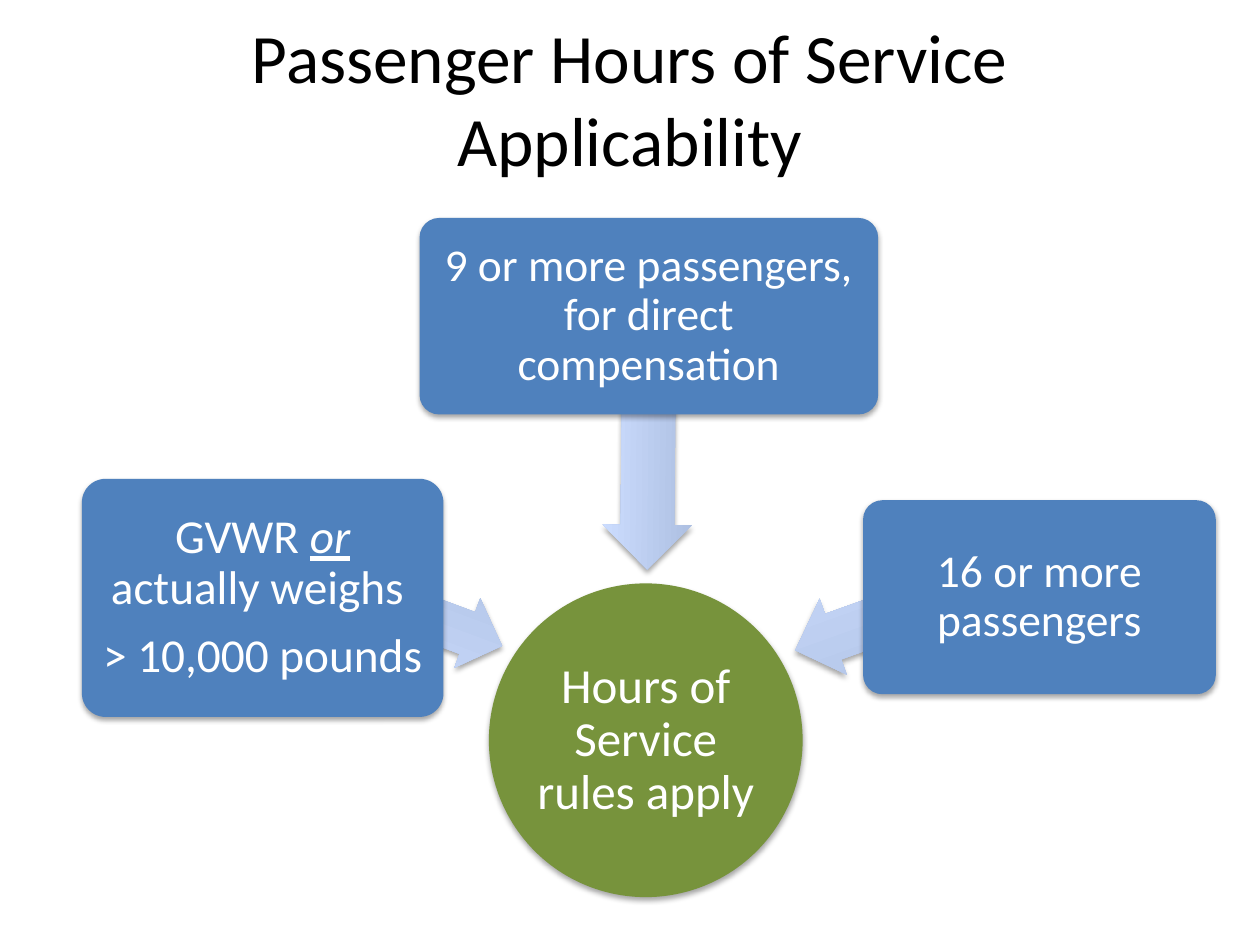
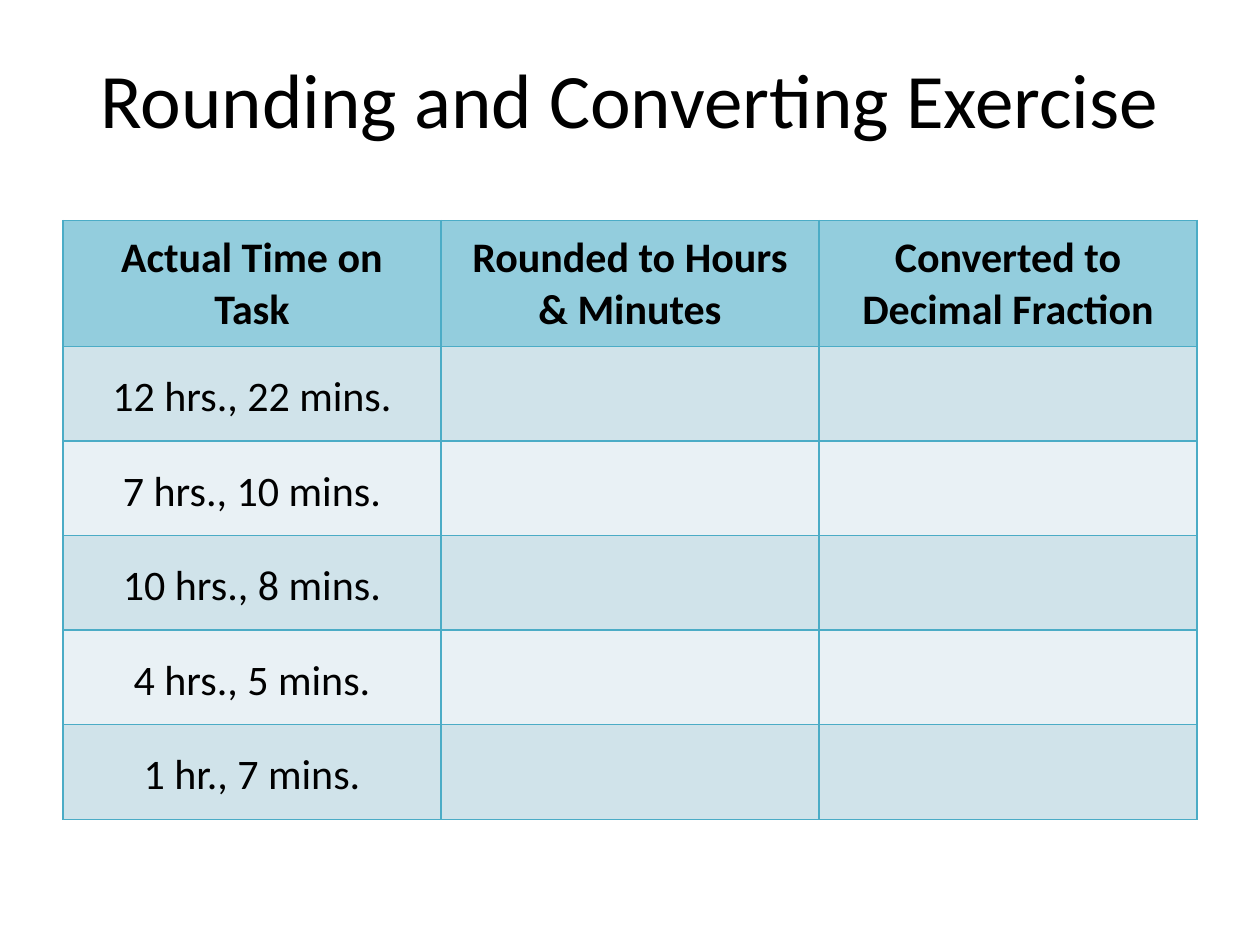
from lxml import etree
from pptx import Presentation
from pptx.dml.color import RGBColor
from pptx.enum.shapes import MSO_SHAPE
from pptx.enum.text import MSO_ANCHOR, PP_ALIGN
from pptx.oxml.ns import qn
from pptx.util import Inches, Pt

CENTER = PP_ALIGN.CENTER
MIDDLE = MSO_ANCHOR.MIDDLE
OVAL = MSO_SHAPE.OVAL
ROUND = MSO_SHAPE.ROUNDED_RECTANGLE
ARROW = MSO_SHAPE.LEFT_ARROW

FONT = "Calibri"
COLORS = {
    "black": "000000", "white": "FFFFFF", "green": "77933C", "blue": "4F81BD",
    "dusk": "ADBFE1", "sky": "CCDDFF", "head": "93CDDD", "odd": "D0E3EA",
    "even": "E9F1F5", "rule": "4BACC6",
}
RGB = {name: RGBColor.from_string(code) for name, code in COLORS.items()}


def write(frame, lines, size, color, bold=False):
    frame.word_wrap = True
    frame.vertical_anchor = MIDDLE
    for i, line in enumerate(lines):
        para = frame.paragraphs[0] if i == 0 else frame.add_paragraph()
        para.alignment = CENTER
        para.font.name = FONT
        para.font.size = Pt(size)
        para.font.bold = bold
        para.font.color.rgb = RGB[color]
        for part in line.split("|"):
            run = para.add_run()
            run.text = part
            if part == "or":
                run.font.italic = True
                run.font.underline = True


def add_shape(slide, kind, box, fill):
    shape = slide.shapes.add_shape(kind, *map(Inches, box))
    if fill:
        shape.fill.solid()
        shape.fill.fore_color.rgb = RGB[fill]
    else:
        shape.fill.gradient()
        shape.fill.gradient_angle = 90
        for stop, name in zip(shape.fill.gradient_stops, ("dusk", "sky")):
            stop.color.rgb = RGB[name]
    shape.line.fill.background()
    shape.shadow.inherit = False
    effects = shape._element.spPr.find(qn("a:effectLst"))
    shadow = etree.SubElement(effects, qn("a:outerShdw"), blurRad=str(Pt(3.1)),
                              dist=str(Pt(1.8)), dir="5400000", rotWithShape="0")
    tint = etree.SubElement(shadow, qn("a:srgbClr"), val=COLORS["black"])
    etree.SubElement(tint, qn("a:alpha"), val="35000")
    return shape


deck = Presentation()
deck.slide_width = Inches(10)
deck.slide_height = Inches(7.5)

slides = []
for title, size in (("Passenger Hours of Service Applicability", 39.6),
                    ("Rounding and Converting Exercise", 44)):
    slide = deck.slides.add_slide(deck.slide_layouts[6])
    box = slide.shapes.add_textbox(Inches(0.5), Inches(0.15), Inches(9), Inches(1.25))
    write(box.text_frame, [title], size, "black")
    slides.append(slide)
rules, drill = slides

nodes = [
    (OVAL, (3.88, 4.63, 2.49, 2.49), "green", 28, 0.02,
     ["Hours of Service rules apply"], None, None),
    (ROUND, (0.65, 3.8, 2.87, 1.89), "blue", 27, 0.06,
     ["GVWR |or| actually weighs ", "> 10,000 pounds"],
     (1.98, 4.47, 2.07, 0.59), 200.4),
    (ROUND, (3.33, 1.73, 3.64, 1.56), "blue", 26, 0.05,
     ["9 or more passengers, for direct compensation"],
     (4.14, 3.16, 2.01, 0.71), 270.5),
    (ROUND, (6.85, 3.97, 2.8, 1.54), "blue", 26, 0.05,
     ["16 or more passengers"], (6.24, 4.43, 2.44, 0.64), 340.3),
]
for kind, box, fill, size, inset, lines, arrow, turn in nodes:
    if arrow:
        pointer = add_shape(rules, ARROW, arrow, None)
        pointer.adjustments[0] = 0.6
        pointer.adjustments[1] = 0.5
        pointer.rotation = turn
    node = add_shape(rules, kind, box, fill)
    if kind == ROUND:
        node.adjustments[0] = 0.1
    frame = node.text_frame
    frame.margin_left = frame.margin_right = Inches(inset)
    frame.margin_top = frame.margin_bottom = Inches(inset)
    write(frame, lines, size, "white")
    for para in frame.paragraphs:
        para.line_spacing = 0.9
    for para in frame.paragraphs[:-1]:
        para.space_after = Pt(0.35 * size)

heads = ["Actual Time on Task", "Rounded to Hours & Minutes",
         "Converted to Decimal Fraction"]
times = ["12 hrs., 22 mins.", "7 hrs., 10 mins.", "10 hrs., 8 mins.",
         "4 hrs., 5 mins.", "1 hr., 7 mins."]
rows = [heads] + [[time, "", ""] for time in times]
table = drill.shapes.add_table(len(rows), len(heads), Inches(0.5), Inches(1.75),
                               Inches(9), Inches(4.75)).table
for r, row in enumerate(rows):
    table.rows[r].height = Inches(0.75 if r else 1)
    fill = ("even", "odd")[r % 2] if r else "head"
    for c, text in enumerate(row):
        cell = table.cell(r, c)
        cell.vertical_anchor = MIDDLE
        cell.margin_left = cell.margin_right = Inches(0.2)
        cell.margin_top = Inches(0.2 if r else 0.1)
        cell.margin_bottom = Inches(0.15 if r else 0.1)
        if text:
            write(cell.text_frame, [text], 24, "black", r == 0)
        for side in ("lnL", "lnR", "lnT", "lnB"):
            edge = etree.SubElement(cell._tc.get_or_add_tcPr(), qn("a:" + side),
                                    w=str(Pt(1)))
            paint = etree.SubElement(edge, qn("a:solidFill"))
            etree.SubElement(paint, qn("a:srgbClr"), val=COLORS["rule"])
        cell.fill.solid()
        cell.fill.fore_color.rgb = RGB[fill]

deck.save("out.pptx")
